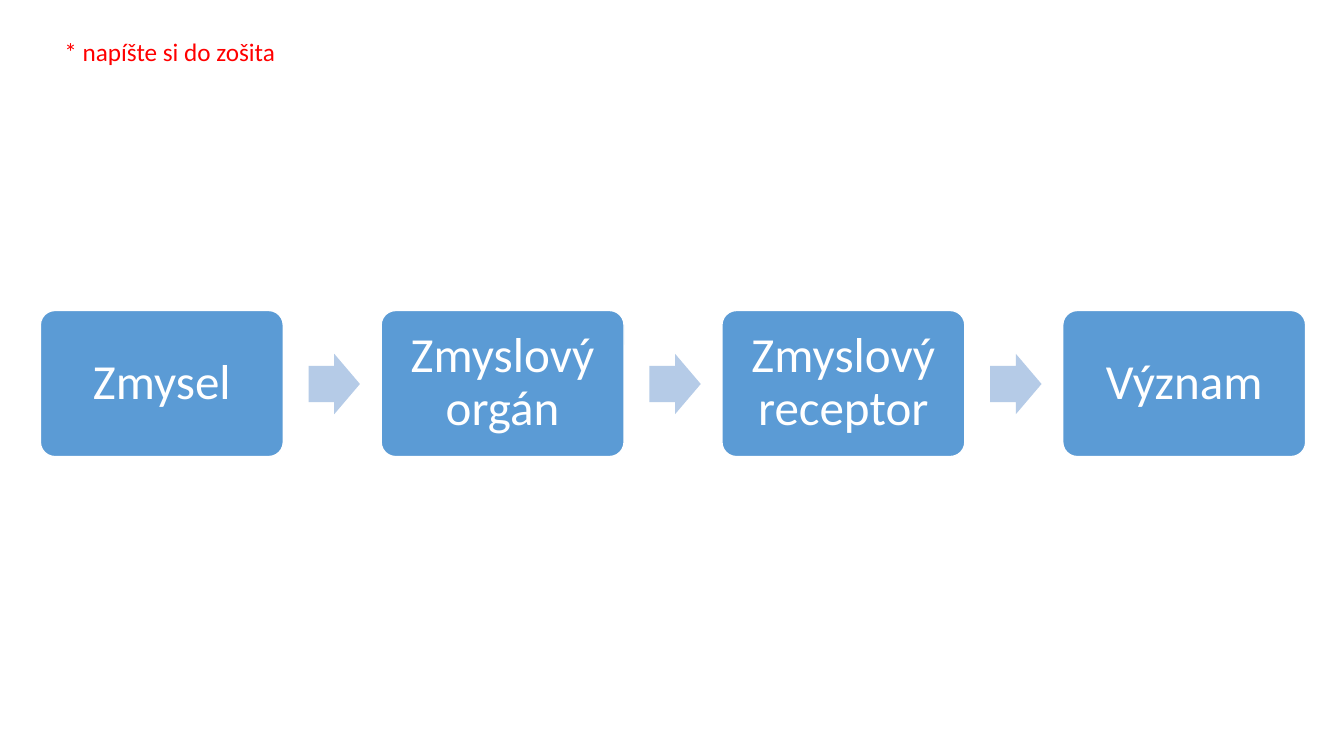
"""Build a slide with a four-step process on the senses."""
from dataclasses import dataclass
from typing import Any

from pptx import Presentation
from pptx.dml.color import RGBColor
from pptx.enum.shapes import MSO_SHAPE
from pptx.enum.text import MSO_ANCHOR, MSO_AUTO_SIZE, PP_ALIGN
from pptx.util import Inches, Pt

STEP_LABELS = ["Zmysel", "Zmyslový orgán", "Zmyslový receptor", "Význam"]
FIRST_LEFT, STEP_PITCH, ARROW_OFFSET = 0.4, 3.38, 2.66
STEP_FRAME = {
    "word_wrap": True,
    "vertical_anchor": MSO_ANCHOR.MIDDLE,
    "margin_left": Inches(0.15),
    "margin_right": Inches(0.15),
    "margin_top": Inches(0.15),
    "margin_bottom": Inches(0.15),
}
STEP_PARAGRAPH = {"alignment": PP_ALIGN.CENTER, "line_spacing": 0.9}
NOTE_FRAME = {"word_wrap": False, "auto_size": MSO_AUTO_SIZE.SHAPE_TO_FIT_TEXT}


@dataclass(frozen=True)
class Block:
    """Look and vertical place of a repeated shape."""

    preset: MSO_SHAPE
    top: float
    width: float
    height: float
    adjustments: tuple[float, ...]
    fill: str
    outline: str | None = None


STEP = Block(MSO_SHAPE.ROUNDED_RECTANGLE, 3.08, 2.41, 1.45, (0.1,), "5B9BD5", "FFFFFF")
ARROW = Block(MSO_SHAPE.RIGHT_ARROW, 3.51, 0.51, 0.6, (0.6, 0.5), "B5CBE7")


def color(value: str) -> RGBColor:
    """Turn a hex string into a colour."""
    return RGBColor.from_string(value)


def apply_format(target: Any, values: dict[str, Any]) -> None:
    """Set each named attribute on the target."""
    for name, value in values.items():
        setattr(target, name, value)


def write_text(box: Any, text: str, size: int, ink: str,
               frame: dict[str, Any], paragraph: dict[str, Any]) -> None:
    """Write one formatted paragraph into a box."""
    apply_format(box.text_frame, frame)
    para = box.text_frame.paragraphs[0]
    apply_format(para, paragraph)
    span = para.add_run()
    span.text = text
    apply_format(span.font, {"name": "Calibri", "size": Pt(size)})
    span.font.color.rgb = color(ink)


def draw_block(page: Any, block: Block, left: float) -> Any:
    """Draw a block at the given left edge."""
    shape = page.shapes.add_shape(block.preset, Inches(left), Inches(block.top),
                                  Inches(block.width), Inches(block.height))
    shape.shadow.inherit = False
    for index, adjustment in enumerate(block.adjustments):
        shape.adjustments[index] = adjustment
    shape.fill.solid()
    shape.fill.fore_color.rgb = color(block.fill)
    if block.outline:
        shape.line.color.rgb = color(block.outline)
        shape.line.width = Pt(1)
    else:
        shape.line.fill.background()
    return shape


def main() -> None:
    """Build and save the deck."""
    deck = Presentation()
    apply_format(deck, {"slide_width": Inches(13.33), "slide_height": Inches(7.5)})
    page = deck.slides.add_slide(deck.slide_layouts[6])
    for index, label in enumerate(STEP_LABELS):
        left = FIRST_LEFT + index * STEP_PITCH
        step = draw_block(page, STEP, left)
        write_text(step, label, 35, "FFFFFF", STEP_FRAME, STEP_PARAGRAPH)
        if index < len(STEP_LABELS) - 1:
            draw_block(page, ARROW, left + ARROW_OFFSET)
    note = page.shapes.add_textbox(Inches(0.54), Inches(0.31), Inches(2.32), Inches(0.4))
    write_text(note, "* napíšte si do zošita", 18, "FF0000", NOTE_FRAME, {})
    deck.save("out.pptx")


if __name__ == "__main__":
    main()
